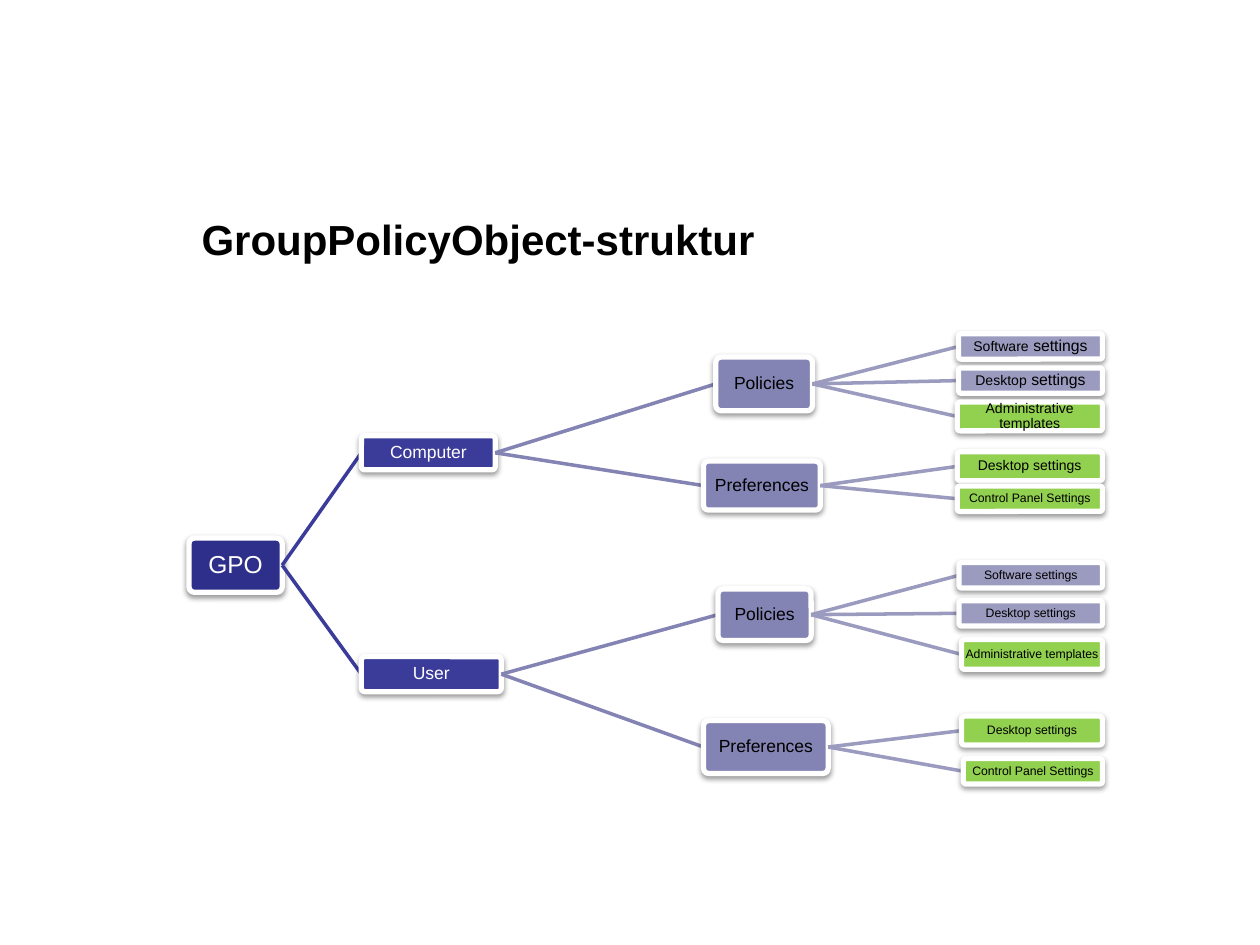
from dataclasses import dataclass, field

from lxml import etree
from pptx import Presentation
from pptx.dml.color import RGBColor
from pptx.enum import shapes, text
from pptx.oxml import ns
from pptx.util import Pt

FONT = "Arial"
EDGE = 630  # shared right edge of the leaf boxes
GREEN = "92D050"
FILLS = ["2E2E8B", "3B3B9A", "8484B4", "9B9BBF"]  # one per level
INKS = ["FFFFFF", "FFFFFF", "000000", "000000"]


@dataclass
class Node:
    label: str
    box: tuple  # left, top, width, height
    size: float
    kids: list = field(default_factory=list)
    fill: str = ""  # replaces the level colour
    tail: str = ""  # ending set in 9 pt


def leaf(label, left, top, high, size=7, fill="", tail=""):
    return Node(label, (left, top, EDGE - left, high), size, [], fill, tail)


TREE = Node("GPO", (108, 307.5, 53.25, 31), 14, [
    Node("Computer", (206.5, 249, 76.5, 19.5), 10, [
        Node("Policies", (409, 204, 55.25, 30.75), 10, [
            leaf("Software", 547.75, 190.75, 14.5, 8, tail=" settings"),
            leaf("Desktop", 547.75, 210.25, 14.5, 8, tail=" settings"),
            leaf("Administrative templates", 547, 229.75, 16.5, 8, GREEN),
        ]),
        Node("Preferences", (402, 263.5, 66.75, 28), 10, [
            leaf("Desktop settings", 547, 258.25, 16.5, 8, GREEN),
            leaf("Control Panel Settings", 547, 277.75, 14.5, fill=GREEN),
        ]),
    ]),
    Node("User", (206.5, 375.25, 80, 20), 10, [
        Node("Policies", (410.25, 336.5, 53.25, 29.5), 10, [
            leaf("Software settings", 548, 321.5, 14.5),
            leaf("Desktop settings", 548, 343.25, 14.5),
            leaf("Administrative templates", 549.5, 365.5, 17, fill=GREEN),
        ]),
        Node("Preferences", (402, 411.75, 71.25, 30.25), 10, [
            leaf("Desktop settings", 549.5, 409.25, 16.5, fill=GREEN),
            leaf("Control Panel Settings", 550.5, 433.5, 14.5, fill=GREEN),
        ]),
    ]),
])


def rgb(code):
    return RGBColor.from_string(code)


def style(font, size, ink, bold=False):
    font.name, font.size, font.bold = FONT, Pt(size), bold
    font.color.rgb = rgb(ink)


def shade(shape):
    """Give the shape a soft shadow straight below it."""
    shape.shadow.inherit = False
    glow = etree.SubElement(
        shape.element.spPr.find(ns.qn("a:effectLst")), ns.qn("a:outerShdw"),
        blurRad=str(Pt(3.1)), dist=str(Pt(1.6)), dir="5400000", rotWithShape="0")
    tint = etree.SubElement(glow, ns.qn("a:srgbClr"), val="000000")
    etree.SubElement(tint, ns.qn("a:alpha"), val="38000")


def add_title(slide, words):
    title = slide.shapes.title
    title.left, title.top, title.width, title.height = map(Pt, (108, 117, 454.5, 39))
    frame = title.text_frame
    frame.text = words
    frame.vertical_anchor = text.MSO_ANCHOR.MIDDLE
    para = frame.paragraphs[0]
    para.alignment = text.PP_ALIGN.LEFT
    style(para.font, 24, "000000", True)


def add_box(slide, node, level):
    box = slide.shapes.add_shape(
        shapes.MSO_SHAPE.ROUNDED_RECTANGLE, *map(Pt, node.box))
    box.adjustments[0] = 0.1
    box.fill.solid()
    box.fill.fore_color.rgb = rgb(node.fill or FILLS[level])
    box.line.color.rgb = rgb("FFFFFF")
    box.line.width = Pt(3)
    shade(box)

    # Label
    frame = box.text_frame
    frame.word_wrap = True
    frame.vertical_anchor = text.MSO_ANCHOR.MIDDLE
    frame.margin_left = frame.margin_right = 0
    frame.margin_top = frame.margin_bottom = 0
    para = frame.paragraphs[0]
    para.alignment = text.PP_ALIGN.CENTER
    para.line_spacing = 0.9
    style(para.font, node.size, INKS[level])
    para.add_run().text = node.label
    if node.tail:
        run = para.add_run()
        run.text = node.tail
        run.font.size = Pt(9)
    return box


def add_link(slide, start, ink):
    link = slide.shapes.add_connector(shapes.MSO_CONNECTOR.STRAIGHT, 0, 0, 0, 0)
    link.begin_connect(start, 3)
    link.line.color.rgb = rgb(ink)
    link.line.width = Pt(2)
    etree.SubElement(link.element.spPr, ns.qn("a:effectLst"))
    return link


def add_tree(slide, node, level=0):
    """Draw a node, then each link beneath the child it leads to."""
    box = add_box(slide, node, level)
    for kid in node.kids:
        link = add_link(slide, box, FILLS[level + 1])
        link.end_connect(add_tree(slide, kid, level + 1), 1)
    return box


def main():
    deck = Presentation()
    deck.slide_width, deck.slide_height = Pt(720), Pt(540)
    slide = deck.slides.add_slide(deck.slide_layouts[5])
    add_title(slide, "GroupPolicyObject-struktur")
    add_tree(slide, TREE)
    deck.save("out.pptx")


if __name__ == "__main__":
    main()
